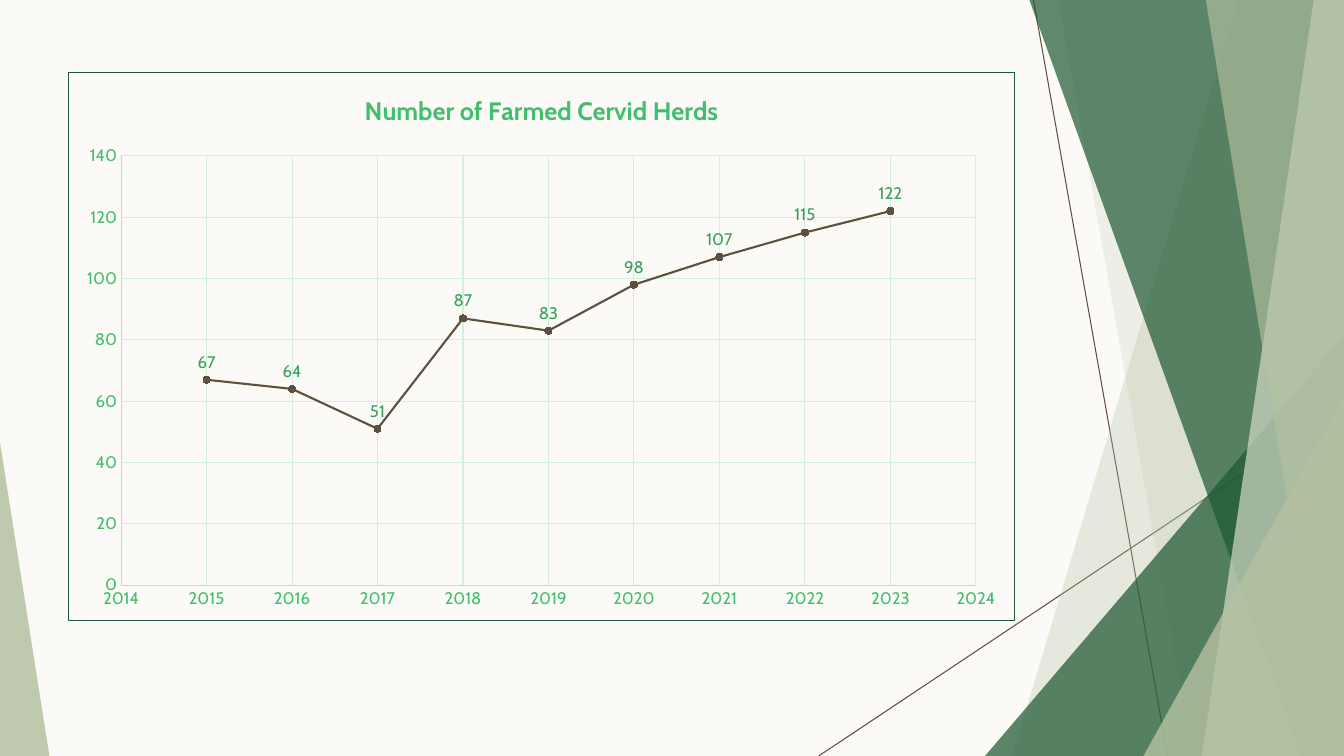
from lxml import etree
from pptx import Presentation, util as u
from pptx.chart import data as chart_data, datalabel
from pptx.dml.color import RGBColor
from pptx.enum import chart as ch, shapes
from pptx.oxml import parse_xml
from pptx.oxml.ns import nsdecls, qn

CREAM = RGBColor(0xFB, 0xFA, 0xF6)
BROWN = RGBColor(0x5D, 0x51, 0x3E)
FOREST = RGBColor(0x1E, 0x58, 0x33)
SAGE = RGBColor(0xB5, 0xC1, 0xA1)
PALE_SAGE = RGBColor(0xD3, 0xDA, 0xC7)
GREEN = RGBColor(0x41, 0xBE, 0x6E)
LABEL_GREEN = RGBColor(0x37, 0xA1, 0x5D)
AXIS_GREEN = RGBColor(0xB6, 0xE6, 0xC7)
GRID_GREEN = RGBColor(0xD3, 0xF0, 0xDE)

WIDTH, HEIGHT = 13.33, 7.5
FONT = "Cabin"
FIRST_YEAR = 2015
HERDS = [67, 64, 51, 87, 83, 98, 107, 115, 122]


def set_values(target, **values):
    for name, value in values.items():
        setattr(target, name, value)


def paint(shape, color, opacity):
    """Fill a shape with a see-through colour, without line or shadow."""
    shape.shadow.inherit = False
    shape.line.fill.background()
    shape.fill.solid()
    shape.fill.fore_color.rgb = color
    tint = shape.fill._xPr.find(qn("a:solidFill"))[0]
    etree.SubElement(tint, qn("a:alpha"), val=str(opacity * 1000))


def add_line(page, start, end):
    line = page.shapes.add_connector(
        shapes.MSO_CONNECTOR.STRAIGHT, *map(u.Inches, start + end))
    line.line.color.rgb = BROWN
    line.line.width = u.Pt(0.75)
    etree.SubElement(line._element.spPr, qn("a:effectLst"))


def add_band(page, top_x, bottom_x, color, opacity):
    """Slanted left edge, reaching the right edge of the slide."""
    corners = [(top_x, 0), (WIDTH, 0), (WIDTH, HEIGHT), (bottom_x, HEIGHT)]
    points = [(u.Inches(x), u.Inches(y)) for x, y in corners]
    builder = page.shapes.build_freeform(*points[0])
    builder.add_line_segments(points[1:], close=True)
    paint(builder.convert_to_shape(), color, opacity)


def add_corner(page, left, top, width, apex, color, opacity):
    """Right triangle standing on the bottom of the slide."""
    box = map(u.Inches, (left, top, width, HEIGHT - top))
    corner = page.shapes.add_shape(shapes.MSO_SHAPE.ISOSCELES_TRIANGLE, *box)
    corner.adjustments[0] = apex
    paint(corner, color, opacity)


def add_facets(page):
    add_line(page, (10.25, 0), (11.58, HEIGHT))
    add_line(page, (WIDTH, 4.03), (8.12, HEIGHT))
    add_band(page, 12.28, 10.04, SAGE, 30)
    add_band(page, 10.5, 11.83, SAGE, 20)
    add_corner(page, 9.77, 3.33, 3.56, 1, FOREST, 72)
    add_band(page, 10.21, 12.91, FOREST, 70)
    add_band(page, 13.03, 11.92, PALE_SAGE, 70)
    add_band(page, 11.96, 13.18, SAGE, 65)
    add_corner(page, 11.34, 3.93, 1.99, 1, SAGE, 80)
    add_corner(page, 0, 4.39, 0.49, 0, SAGE, 85)


def format_axis(axis, low, high, step):
    set_values(axis, minimum_scale=low, maximum_scale=high, major_unit=step,
               has_major_gridlines=True,
               major_tick_mark=ch.XL_TICK_MARK.NONE,
               minor_tick_mark=ch.XL_TICK_MARK.NONE)
    set_values(axis.tick_labels, number_format="General",
               number_format_is_linked=False)
    set_values(axis.tick_labels.font, size=u.Pt(12), name=FONT)
    axis.tick_labels.font.color.rgb = GREEN
    for part, color in ((axis, AXIS_GREEN), (axis.major_gridlines, GRID_GREEN)):
        part.format.line.color.rgb = color
        part.format.line.width = u.Pt(0.75)


def format_series(series):
    series.format.line.color.rgb = BROWN
    series.format.line.width = u.Pt(1.5)
    set_values(series.marker, style=ch.XL_MARKER_STYLE.CIRCLE, size=5)
    series.marker.format.fill.solid()
    series.marker.format.fill.fore_color.rgb = BROWN
    series.marker.format.line.color.rgb = BROWN
    labels = datalabel.DataLabels(series._element.get_or_add_dLbls())
    set_values(labels, show_value=True, position=ch.XL_LABEL_POSITION.ABOVE)
    set_values(labels.font, size=u.Pt(12), name=FONT)
    labels.font.color.rgb = LABEL_GREEN


def frame_chart(chart):
    """Border of the chart and fixed place of the plot inside it."""
    chart._chartSpace.find(qn("c:chart")).addnext(parse_xml(
        f'<c:spPr {nsdecls("c", "a")}><a:noFill/><a:ln w="9525"><a:solidFill>'
        f'<a:srgbClr val="{FOREST}"/></a:solidFill></a:ln></c:spPr>'))
    plot_area = chart._chartSpace.find(".//" + qn("c:plotArea"))
    for layout in plot_area.findall(qn("c:layout")):
        plot_area.remove(layout)
    layout = etree.Element(qn("c:layout"))
    manual = etree.SubElement(layout, qn("c:manualLayout"))
    places = dict(layoutTarget="inner", xMode="edge", yMode="edge",
                  x="0.056", y="0.153", w="0.903", h="0.783")
    for name, value in places.items():
        etree.SubElement(manual, qn("c:" + name), val=value)
    plot_area.insert(0, layout)


def add_herd_chart(page, left, top, width, height):
    table = chart_data.XyChartData()
    herds = table.add_series("Series 1")
    for year, count in enumerate(HERDS, FIRST_YEAR):
        herds.add_data_point(year, count)
    chart = page.shapes.add_chart(
        ch.XL_CHART_TYPE.XY_SCATTER_LINES,
        *map(u.Inches, (left, top, width, height)), table).chart
    set_values(chart, has_legend=False, has_title=True)
    set_values(chart.font, size=u.Pt(10), name=FONT)
    chart.font.color.rgb = FOREST
    chart.plots[0].vary_by_categories = False

    # Title
    title = chart.chart_title
    title.include_in_layout = False
    span = title.text_frame.paragraphs[0].add_run()
    span.text = "Number of Farmed Cervid Herds"
    set_values(span.font, size=u.Pt(18), bold=True, name=FONT)
    span.font.color.rgb = GREEN

    # Axes and data
    format_axis(chart.category_axis, 2014, 2024, 1)
    format_axis(chart.value_axis, 0, 140, 20)
    format_series(chart.plots[0].series[0])
    frame_chart(chart)


def main():
    deck = Presentation()
    set_values(deck, slide_width=u.Inches(WIDTH), slide_height=u.Inches(HEIGHT))
    page = deck.slides.add_slide(deck.slide_layouts[6])
    page.background.fill.solid()
    page.background.fill.fore_color.rgb = CREAM
    add_facets(page)
    add_herd_chart(page, 0.67, 0.71, 9.4, 5.45)
    deck.save("out.pptx")


if __name__ == "__main__":
    main()
